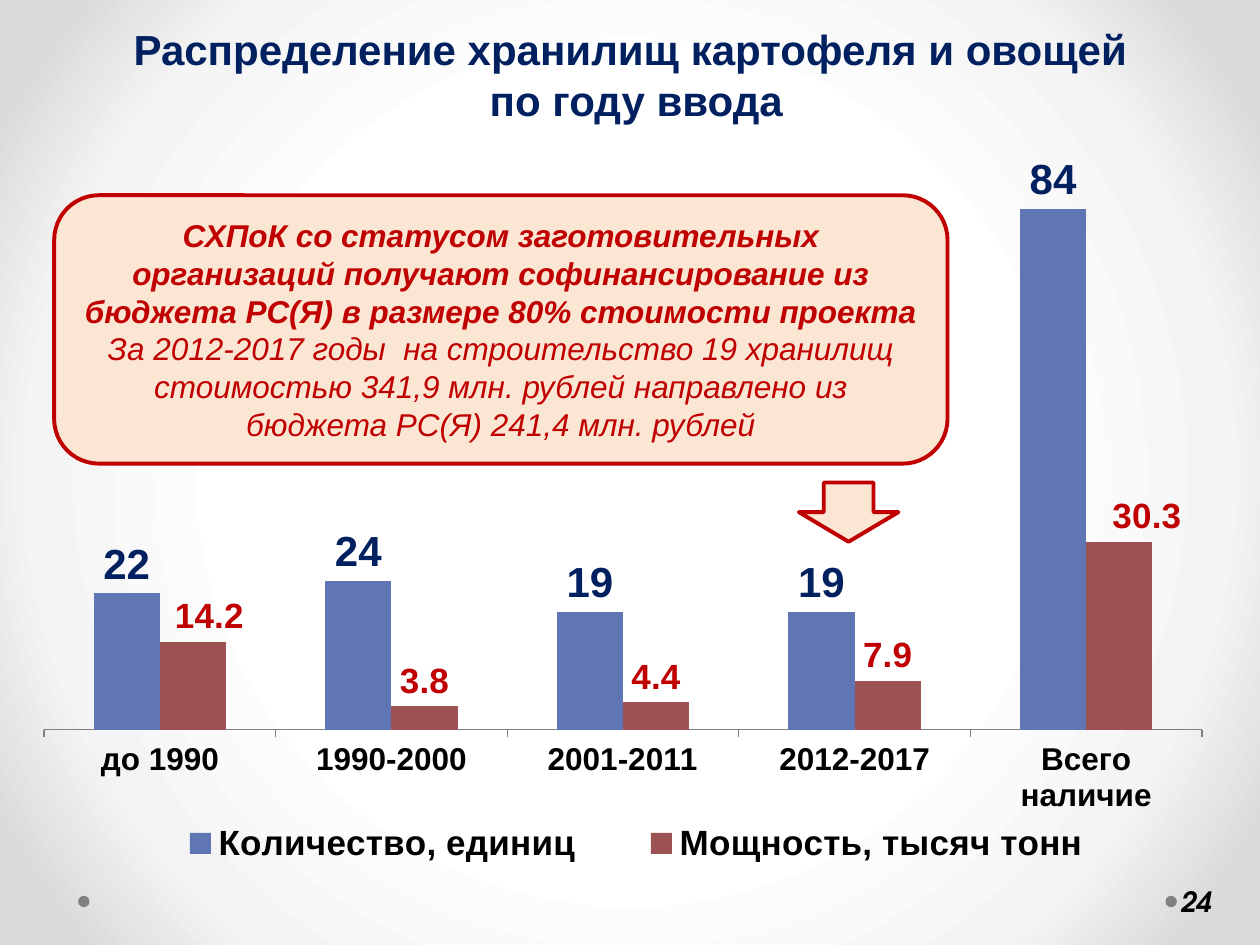
from lxml.etree import SubElement
from pptx import Presentation
from pptx.chart.data import CategoryChartData
from pptx.dml.color import RGBColor
from pptx.enum.chart import XL_CHART_TYPE, XL_LABEL_POSITION, XL_LEGEND_POSITION, XL_TICK_LABEL_POSITION, XL_TICK_MARK
from pptx.enum.shapes import MSO_SHAPE
from pptx.enum.text import MSO_ANCHOR, PP_ALIGN
from pptx.oxml import parse_xml
from pptx.oxml.ns import nsdecls, qn
from pptx.util import Inches, Pt

NAVY = RGBColor(0x00, 0x20, 0x60)
RED = RGBColor(0xC0, 0x00, 0x00)
PEACH = RGBColor(0xFA, 0xE6, 0xD3)
BLUE = RGBColor(0x60, 0x76, 0xB4)
BROWN = RGBColor(0x9C, 0x52, 0x52)
GREY = RGBColor(0x80, 0x80, 0x80)
BLACK = RGBColor(0, 0, 0)

CATEGORIES = ["до 1990", "1990-2000", "2001-2011", "2012-2017", "Всего наличие"]
# name, values, bar colour, label size, label colour, number format, label shifts
SERIES = [
    ("Количество, единиц", (22, 24, 19, 19, 84), BLUE, 24, NAVY, "General", {}),
    ("Мощность, тысяч тонн", (14.2, 3.8, 4.4, 7.9, 30.3), BROWN, 20, RED, "0.0",
     {0: 0.013, 4: 0.022}),
]


def inches(box):
    return [Inches(v) for v in box]


def set_font(font, size, color, name="Arial", **formats):
    font.color.rgb = color
    values = {"size": Pt(size), "name": name, "bold": True, **formats}
    for key, value in values.items():
        setattr(font, key, value)


def add_paragraphs(tf, lines, size, color, align=PP_ALIGN.CENTER):
    """Each line is a text with its extra font formats."""
    for i, (text, formats) in enumerate(lines):
        p = tf.add_paragraph() if i else tf.paragraphs[0]
        p.alignment = align
        r = p.add_run()
        r.text = text
        set_font(r.font, size, color, **formats)


def add_layout(parent, index, **values):
    """Insert a manual chart layout as the child at the given index."""
    layout = parse_xml(f"<c:layout {nsdecls('c')}/>")
    manual = SubElement(layout, qn("c:manualLayout"))
    for key, value in values.items():
        SubElement(manual, qn("c:" + key)).set("val", str(value))
    for old in parent.findall(qn("c:layout")):
        parent.remove(old)
    parent.insert(index, layout)


def paint_background(s):
    fill = s.background.fill
    fill.gradient()
    stops = "".join(
        f'<a:gs pos="{pos * 1000}"><a:srgbClr val="{color}"/></a:gs>'
        for pos, color in ((50, "FFFFFF"), (76, "F4F4F4"), (92, "DADADA")))
    new = parse_xml(
        f'<a:gradFill {nsdecls("a")} rotWithShape="1"><a:gsLst>{stops}</a:gsLst>'
        '<a:path path="circle"><a:fillToRect l="50000" t="50000" r="50000" b="50000"/>'
        '</a:path></a:gradFill>')
    old = s._element.find(".//" + qn("a:gradFill"))
    old.getparent().replace(old, new)


def add_title(s, box):
    title = s.shapes.title
    title.left, title.top, title.width, title.height = inches(box)
    tf = title.text_frame
    tf.word_wrap = False
    tf.vertical_anchor = MSO_ANCHOR.TOP
    add_paragraphs(tf, [("Распределение хранилищ картофеля и овощей ", {}),
                        ("по году ввода", {})], 24, NAVY)


def add_shape(s, kind, box, fill, line=None):
    sp = s.shapes.add_shape(kind, *inches(box))
    sp.shadow.inherit = False
    sp.fill.solid()
    sp.fill.fore_color.rgb = fill
    if line is None:
        sp.line.fill.background()
    else:
        sp.line.color.rgb = line
        sp.line.width = Pt(2.25)
    return sp


def add_footer(s, left, right, top, dot):
    for x in (left, right):
        add_shape(s, MSO_SHAPE.OVAL, (x, top, dot, dot), GREY)
    number = s.shapes.add_textbox(*inches((right + dot, top - 0.16, 0.61, 0.4)))
    tf = number.text_frame
    tf.margin_left, tf.margin_right = Inches(0.03), Inches(0.05)
    tf.word_wrap = True
    tf.vertical_anchor = MSO_ANCHOR.MIDDLE
    add_paragraphs(tf, [("24", {"name": "TeX Gyre Adventor", "italic": True})],
                   16, BLACK, PP_ALIGN.LEFT)


def format_series(ser, color, size, label_color, number_format, shifts):
    ser.format.fill.solid()
    ser.format.fill.fore_color.rgb = color
    ser.invert_if_negative = False
    labels = ser.data_labels
    formats = {"show_value": True, "number_format": number_format,
               "number_format_is_linked": False,
               "position": XL_LABEL_POSITION.OUTSIDE_END}
    for key, value in formats.items():
        setattr(labels, key, value)
    set_font(labels.font, size, label_color)
    # Labels moved to the right of their bars
    for point, shift in shifts.items():
        label = ser.points[point].data_label
        set_font(label.font, size, label_color)
        label.position = XL_LABEL_POSITION.OUTSIDE_END
    for dlbl, shift in zip(ser._element.iter(qn("c:dLbl")), shifts.values()):
        add_layout(dlbl, 1, x=shift, y=0)


def add_storage_chart(s, box):
    data = CategoryChartData()
    data.categories = CATEGORIES
    for name, values, *_ in SERIES:
        data.add_series(name, values)
    chart = s.shapes.add_chart(XL_CHART_TYPE.COLUMN_CLUSTERED, *inches(box), data).chart
    set_font(chart.font, 12, BLACK)
    chart.has_title = False

    plot = chart.plots[0]
    plot.gap_width, plot.overlap, plot.vary_by_categories = 150, 0, False
    for ser, (_, _, *formats) in zip(plot.series, SERIES):
        format_series(ser, *formats)

    # Axes
    cat, val = chart.category_axis, chart.value_axis
    set_font(cat.tick_labels.font, 18, BLACK)
    cat.tick_label_position = XL_TICK_LABEL_POSITION.LOW
    cat.major_tick_mark = XL_TICK_MARK.OUTSIDE
    cat.format.line.color.rgb = GREY
    val.minimum_scale, val.maximum_scale = 0, 90
    val.has_major_gridlines = val.visible = False

    # Legend below the plot
    chart.has_legend = True
    legend = chart.legend
    legend.position = XL_LEGEND_POSITION.RIGHT
    legend.include_in_layout = False
    set_font(legend.font, 20, BLACK)
    add_layout(legend._element, 1, xMode="edge", yMode="edge",
               x=0.1, y=0.87, w=0.81, h=0.09)
    plot_area = chart._chartSpace.find(".//" + qn("c:plotArea"))
    add_layout(plot_area, 0, layoutTarget="inner", xMode="edge", yMode="edge",
               x=0.035, y=0.035, w=0.919, h=0.731)


def add_callout(s, box):
    sp = add_shape(s, MSO_SHAPE.ROUNDED_RECTANGLE, box, PEACH, RED)
    tf = sp.text_frame
    tf.word_wrap = True
    tf.vertical_anchor = MSO_ANCHOR.MIDDLE
    add_paragraphs(tf, [
        ("СХПоК со статусом заготовительных организаций получают софинансирование "
         "из бюджета РС(Я) в размере 80% стоимости проекта", {"italic": True}),
        ("За 2012-2017 годы  на строительство 19 хранилищ стоимостью 341,9 млн. рублей "
         "направлено из бюджета РС(Я) 241,4 млн. рублей", {"italic": True, "bold": False}),
    ], 18, RED)
    # Arrow from the callout to the 2012-2017 bars
    x, y, w, h = box
    add_shape(s, MSO_SHAPE.DOWN_ARROW, (x + w - 1.18, y + h + 0.15, 0.79, 0.47), PEACH, RED)


def main():
    prs = Presentation()
    prs.slide_width, prs.slide_height = Inches(10), Inches(7.5)
    s = prs.slides.add_slide(prs.slide_layouts[5])
    paint_background(s)
    add_footer(s, 0.62, 9.25, 7.11, 0.09)
    add_title(s, (0.92, 0.14, 8.26, 0.91))
    add_storage_chart(s, (0, 1.15, 10, 6.06))
    add_callout(s, (0.43, 1.55, 7.09, 2.13))
    prs.save("out.pptx")


if __name__ == "__main__":
    main()
